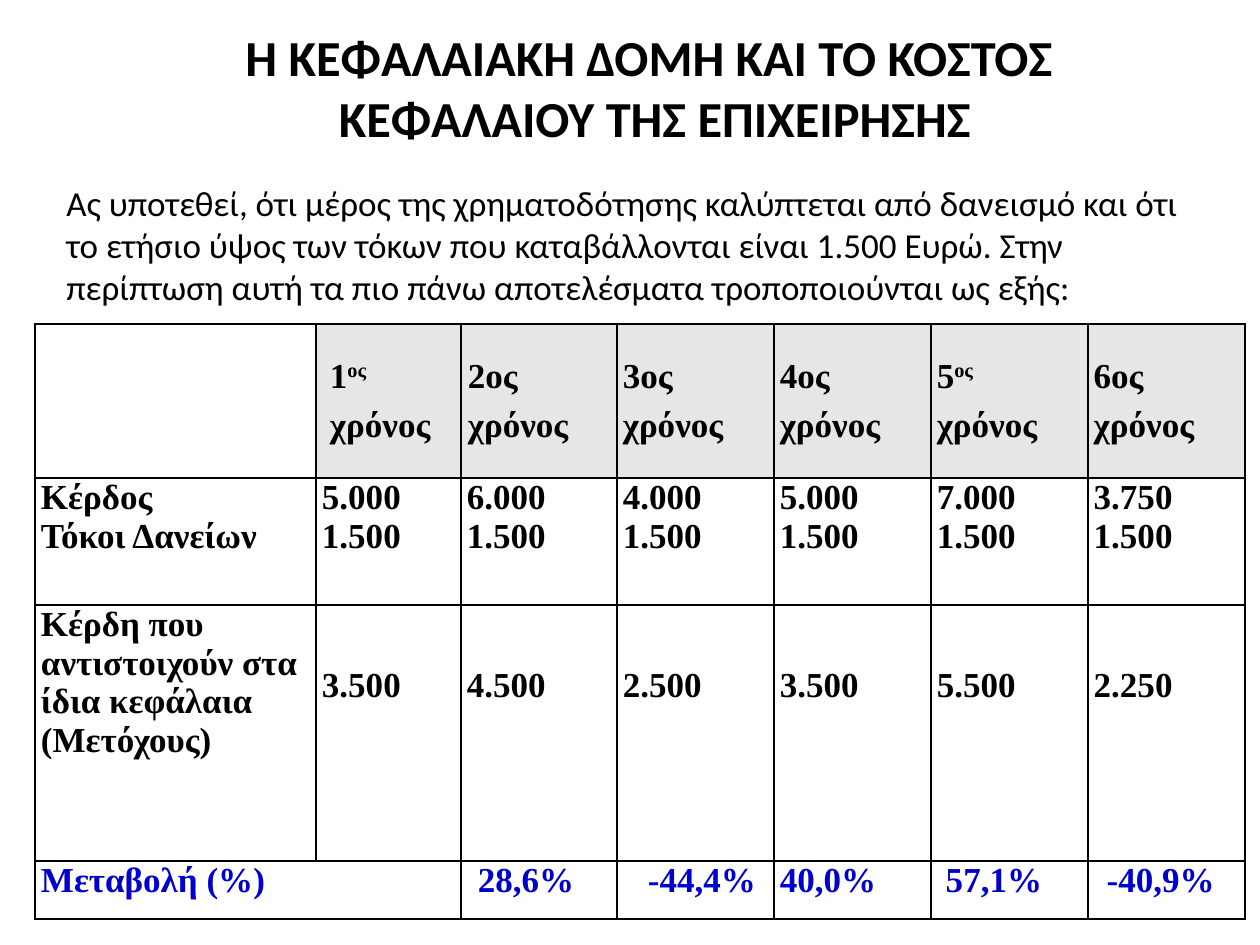
from lxml.etree import SubElement
from pptx import Presentation
from pptx.dml.color import RGBColor
from pptx.enum.text import MSO_ANCHOR as Anchor, PP_ALIGN as Align
from pptx.oxml.ns import qn
from pptx.util import Pt

# Content
TITLE = "Η ΚΕΦΑΛΑΙΑΚΗ ΔΟΜΗ ΚΑΙ ΤΟ ΚΟΣΤΟΣ \vΚΕΦΑΛΑΙΟΥ ΤΗΣ ΕΠΙΧΕΙΡΗΣΗΣ"
INTRO = ("Ας υποτεθεί, ότι μέρος της χρηματοδότησης καλύπτεται από δανεισμό και ότι "
         "το ετήσιο ύψος των τόκων που καταβάλλονται είναι 1.500 Ευρώ. Στην "
         "περίπτωση αυτή τα πιο πάνω αποτελέσματα τροποποιούνται ως εξής:")
# "^" marks the start of a superscript, a new line a new paragraph
YEARS = ["1^ος", "2ος", "3ος", "4ος", "5^ος", "6ος"]
PROFITS = ["5.000", "6.000", "4.000", "5.000", "7.000", "3.750"]
INTEREST = "1.500"
ROWS = [
    [""] + [f"{year}\nχρόνος" for year in YEARS],
    ["Κέρδος\nΤόκοι Δανείων"] + [f"{profit}\n{INTEREST}" for profit in PROFITS],
    ["Κέρδη που αντιστοιχούν στα ίδια κεφάλαια (Μετόχους)",
     "3.500", "4.500", "2.500", "3.500", "5.500", "2.250"],
    ["Μεταβολή (%)", "", "28,6%", "-44,4%", "40,0%", "57,1%", "-40,9%"],
]
HEADER, NET, CHANGE = 0, 2, 3

# Layout in px
PX = 914400 // 126
COLUMN_WIDTHS = [281, 145, 156, 157, 157, 157, 157]
ROW_HEIGHTS = [154, 127, 256, 58]
INDENTS = {HEADER: [0, 8, 1, 0, 0, 0, 0], CHANGE: [0, 0, 11, 25, 0, 9, 13]}
CELL_INSET = 6
NET_DROP = 61  # pushes the net figures below the top of their row
THICK_ROW_LINES, THICK_COLUMN_LINES = {0, 1, 4}, {0, 7}

BLACK = RGBColor(0x00, 0x00, 0x00)
BLUE = RGBColor(0x00, 0x00, 0xCC)
GREY = RGBColor(0xE6, 0xE6, 0xE6)


def set_font(font, name, size, color=BLACK, bold=False):
    font.name, font.size, font.bold = name, Pt(size), bold
    font.color.rgb = color


def add_text(slide, text, place, size, bold=False, align=Align.LEFT, anchor=Anchor.TOP):
    box = slide.shapes.add_textbox(*(n * PX for n in place))
    frame = box.text_frame
    frame.word_wrap, frame.vertical_anchor = True, anchor
    para = frame.paragraphs[0]
    para.text, para.alignment = text, align
    set_font(para.font, "Calibri", size, bold=bold)


def set_borders(cell, row, column):
    thick = {
        "L": column in THICK_COLUMN_LINES, "R": column + 1 in THICK_COLUMN_LINES,
        "T": row in THICK_ROW_LINES, "B": row + 1 in THICK_ROW_LINES,
    }
    properties = cell._tc.get_or_add_tcPr()
    for side, is_thick in thick.items():
        line = SubElement(properties, qn(f"a:ln{side}"), w=str(Pt(1.5 if is_thick else 1)))
        SubElement(SubElement(line, qn("a:solidFill")), qn("a:srgbClr"), val=str(BLACK))


def fill_cell(cell, text, row, column):
    cell.margin_left = cell.margin_right = CELL_INSET * PX
    cell.margin_top = NET_DROP * PX if row == NET and column else 0
    cell.margin_bottom = 0
    cell.vertical_anchor = Anchor.MIDDLE if row == HEADER else Anchor.TOP
    set_borders(cell, row, column)
    if row == HEADER and column:
        cell.fill.solid()
        cell.fill.fore_color.rgb = GREY
    else:
        cell.fill.background()

    frame = cell.text_frame
    for index, line in enumerate(text.split("\n")):
        para = frame.add_paragraph() if index else frame.paragraphs[0]
        set_font(para.font, "Times New Roman", 20, BLUE if row == CHANGE else BLACK, True)
        if row == HEADER:
            para.space_before = para.space_after = Pt(3)
        if row in INDENTS:
            para._p.get_or_add_pPr().set("marL", str(INDENTS[row][column] * PX))
        base, _, raised = line.partition("^")
        if base:
            para.add_run().text = base
        if raised:
            span = para.add_run()
            span.text = raised
            span._r.get_or_add_rPr().set("baseline", "30000")


def add_profit_table(slide):
    table = slide.shapes.add_table(
        len(ROWS), len(COLUMN_WIDTHS), 35 * PX, 324 * PX,
        sum(COLUMN_WIDTHS) * PX, sum(ROW_HEIGHTS) * PX).table
    table.first_row = table.horz_banding = False
    for column, width in zip(table.columns, COLUMN_WIDTHS):
        column.width = width * PX
    for row, height in zip(table.rows, ROW_HEIGHTS):
        row.height = height * PX
    table.cell(CHANGE, 0).merge(table.cell(CHANGE, 1))
    for row, texts in enumerate(ROWS):
        for column, text in enumerate(texts):
            fill_cell(table.cell(row, column), text, row, column)


def main():
    deck = Presentation()
    deck.slide_width, deck.slide_height = 1260 * PX, 945 * PX
    slide = deck.slides.add_slide(deck.slide_layouts[6])
    # Title, table, introduction
    add_text(slide, TITLE, (25, 37, 1260, 100), 28.8, True, Align.CENTER, Anchor.MIDDLE)
    add_profit_table(slide)
    add_text(slide, INTRO, (54, 175, 1160, 140), 20)
    deck.save("out.pptx")


if __name__ == "__main__":
    main()
